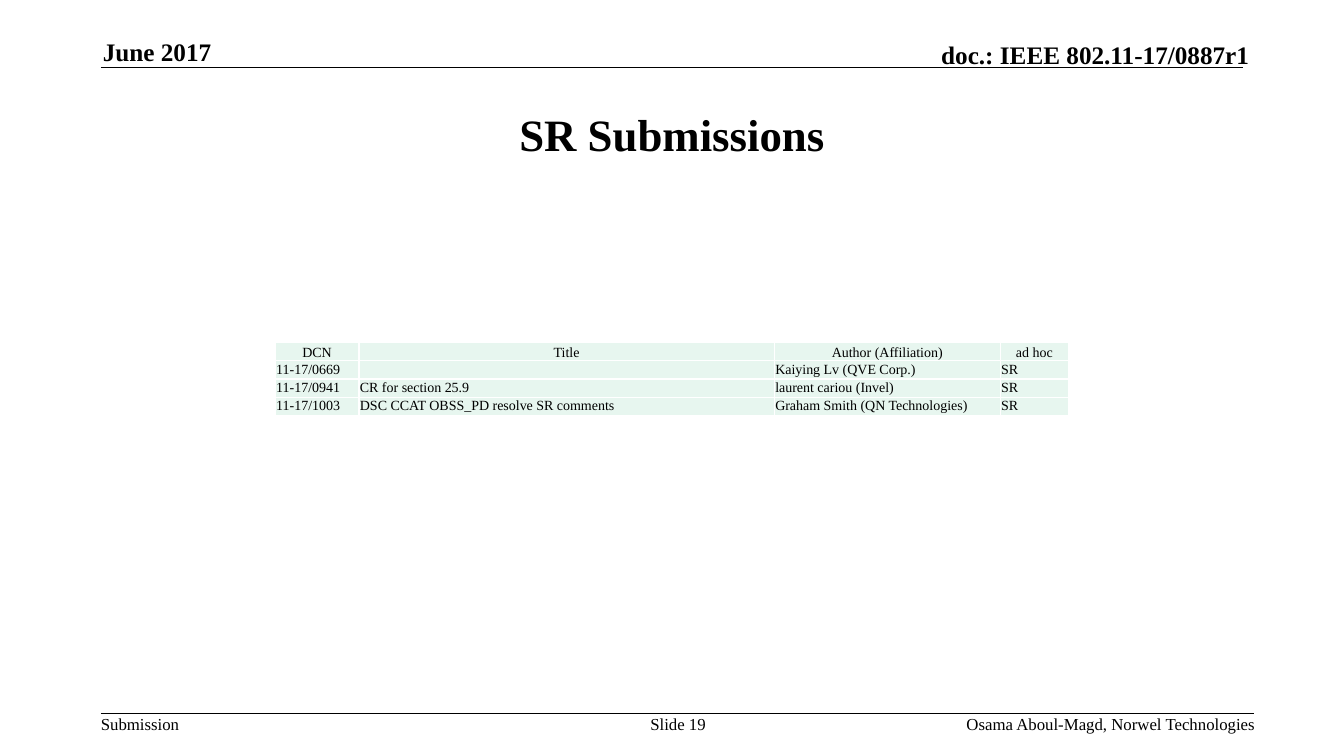
"""Build the SR Submissions slide with its header, footer and table."""
from dataclasses import dataclass

from lxml.etree import SubElement
from pptx import Presentation
from pptx.dml.color import RGBColor
from pptx.enum.shapes import MSO_CONNECTOR
from pptx.enum.text import MSO_ANCHOR, PP_ALIGN
from pptx.oxml.ns import qn
from pptx.slide import Slide
from pptx.table import _Cell
from pptx.text.text import TextFrame
from pptx.util import Inches, Pt


@dataclass(frozen=True)
class Theme:
    font: str = "Times New Roman"
    ink: RGBColor = RGBColor(0x00, 0x00, 0x00)
    cell_fill: RGBColor = RGBColor(0xE7, 0xF6, 0xEF)
    border: str = "FFFFFF"
    title_size: int = 32
    header_size: int = 18
    footer_size: int = 12
    table_size: int = 10
    line_width: int = 1


@dataclass(frozen=True)
class Label:
    text: str
    left: float
    top: float
    width: float
    height: float
    size: int
    align: PP_ALIGN = PP_ALIGN.LEFT
    anchor: MSO_ANCHOR = MSO_ANCHOR.TOP
    bold: bool = False
    wrap: bool = True


@dataclass(frozen=True)
class Rule:
    left: float
    right: float
    top: float


THEME = Theme()
LABELS = (
    Label("June 2017", 1.02, 0.36, 2.73, 0.3, THEME.header_size,
          anchor=MSO_ANCHOR.BOTTOM, bold=True),
    Label("doc.: IEEE 802.11-17/0887r1", 7.29, 0.39, 5.1, 0.3, THEME.header_size,
          PP_ALIGN.RIGHT, MSO_ANCHOR.BOTTOM, True),
    Label("Submission", 1, 7.08, 0.79, 0.2, THEME.footer_size, wrap=False),
    Label("Slide 19", 6.34, 7.08, 0.77, 0.4, THEME.footer_size, PP_ALIGN.CENTER),
    Label("Osama Aboul-Magd, Norwel Technologies", 7.81, 7.08, 4.64, 0.2,
          THEME.footer_size, PP_ALIGN.RIGHT),
)
RULES = (Rule(1, 12.33, 0.67), Rule(1, 12.44, 7.08))
COLUMN_WIDTHS = (0.83, 4.12, 2.24, 0.68)
ROW_HEIGHT = 0.18
SUBMISSIONS = (
    ("DCN", "Title", "Author (Affiliation)", "ad hoc"),
    ("11-17/0669", "", "Kaiying Lv (QVE Corp.)", "SR"),
    ("11-17/0941", "CR for section 25.9", "laurent cariou (Invel)", "SR"),
    ("11-17/1003", "DSC CCAT OBSS_PD resolve SR comments",
     "Graham Smith (QN Technologies)", "SR"),
)


def write_text(frame: TextFrame, text: str, size: int, align: PP_ALIGN,
               bold: bool = False) -> None:
    paragraph = frame.paragraphs[0]
    paragraph.alignment = align
    if not text:
        SubElement(paragraph._p, qn("a:endParaRPr"), sz=str(size * 100))
        return
    run = paragraph.add_run()
    run.text = text
    run.font.name = THEME.font
    run.font.size = Pt(size)
    run.font.bold = bold
    run.font.color.rgb = THEME.ink


def add_title(slide: Slide, text: str) -> None:
    title = slide.shapes.title
    title.left, title.top = Inches(1), Inches(0.75)
    title.width, title.height = Inches(11.33), Inches(1.16)
    title.text_frame.vertical_anchor = MSO_ANCHOR.MIDDLE
    write_text(title.text_frame, text, THEME.title_size, PP_ALIGN.CENTER, True)


def add_label(slide: Slide, label: Label) -> None:
    box = slide.shapes.add_textbox(Inches(label.left), Inches(label.top),
                                   Inches(label.width), Inches(label.height))
    frame = box.text_frame
    frame.margin_left = frame.margin_right = frame.margin_top = frame.margin_bottom = 0
    frame.word_wrap = label.wrap
    frame.vertical_anchor = label.anchor
    write_text(frame, label.text, label.size, label.align, label.bold)


def add_rule(slide: Slide, rule: Rule) -> None:
    line = slide.shapes.add_connector(
        MSO_CONNECTOR.STRAIGHT, Inches(rule.left), Inches(rule.top),
        Inches(rule.right), Inches(rule.top))
    line.line.color.rgb = THEME.ink
    line.line.width = Pt(THEME.line_width)
    SubElement(line._element.spPr, qn("a:effectLst"))


def format_cell(cell: _Cell, text: str, is_header: bool) -> None:
    cell.margin_left = cell.margin_right = cell.margin_top = Inches(0.01)
    cell.margin_bottom = 0
    cell.vertical_anchor = MSO_ANCHOR.BOTTOM if is_header else MSO_ANCHOR.TOP
    properties = cell._tc.get_or_add_tcPr()
    for side in ("a:lnL", "a:lnR", "a:lnT", "a:lnB"):
        border = SubElement(properties, qn(side), w=str(Pt(THEME.line_width)))
        fill = SubElement(border, qn("a:solidFill"))
        SubElement(fill, qn("a:srgbClr"), val=THEME.border)
    cell.fill.solid()
    cell.fill.fore_color.rgb = THEME.cell_fill
    align = PP_ALIGN.CENTER if is_header else PP_ALIGN.LEFT
    write_text(cell.text_frame, text, THEME.table_size, align)


def add_submissions(slide: Slide) -> None:
    table = slide.shapes.add_table(
        len(SUBMISSIONS), len(COLUMN_WIDTHS), Inches(2.73), Inches(3.4),
        Inches(sum(COLUMN_WIDTHS)), Inches(ROW_HEIGHT * len(SUBMISSIONS))).table
    table.first_row = table.horz_banding = False
    for column, width in zip(table.columns, COLUMN_WIDTHS):
        column.width = Inches(width)
    for row_index, (row, texts) in enumerate(zip(table.rows, SUBMISSIONS)):
        row.height = Inches(ROW_HEIGHT)
        for cell, text in zip(row.cells, texts):
            format_cell(cell, text, row_index == 0)


def main() -> None:
    presentation = Presentation()
    presentation.slide_width = Inches(13.33)
    presentation.slide_height = Inches(7.5)
    slide = presentation.slides.add_slide(presentation.slide_layouts[5])
    for rule in RULES:
        add_rule(slide, rule)
    add_title(slide, "SR Submissions")
    for label in LABELS:
        add_label(slide, label)
    add_submissions(slide)
    presentation.save("out.pptx")


if __name__ == "__main__":
    main()
